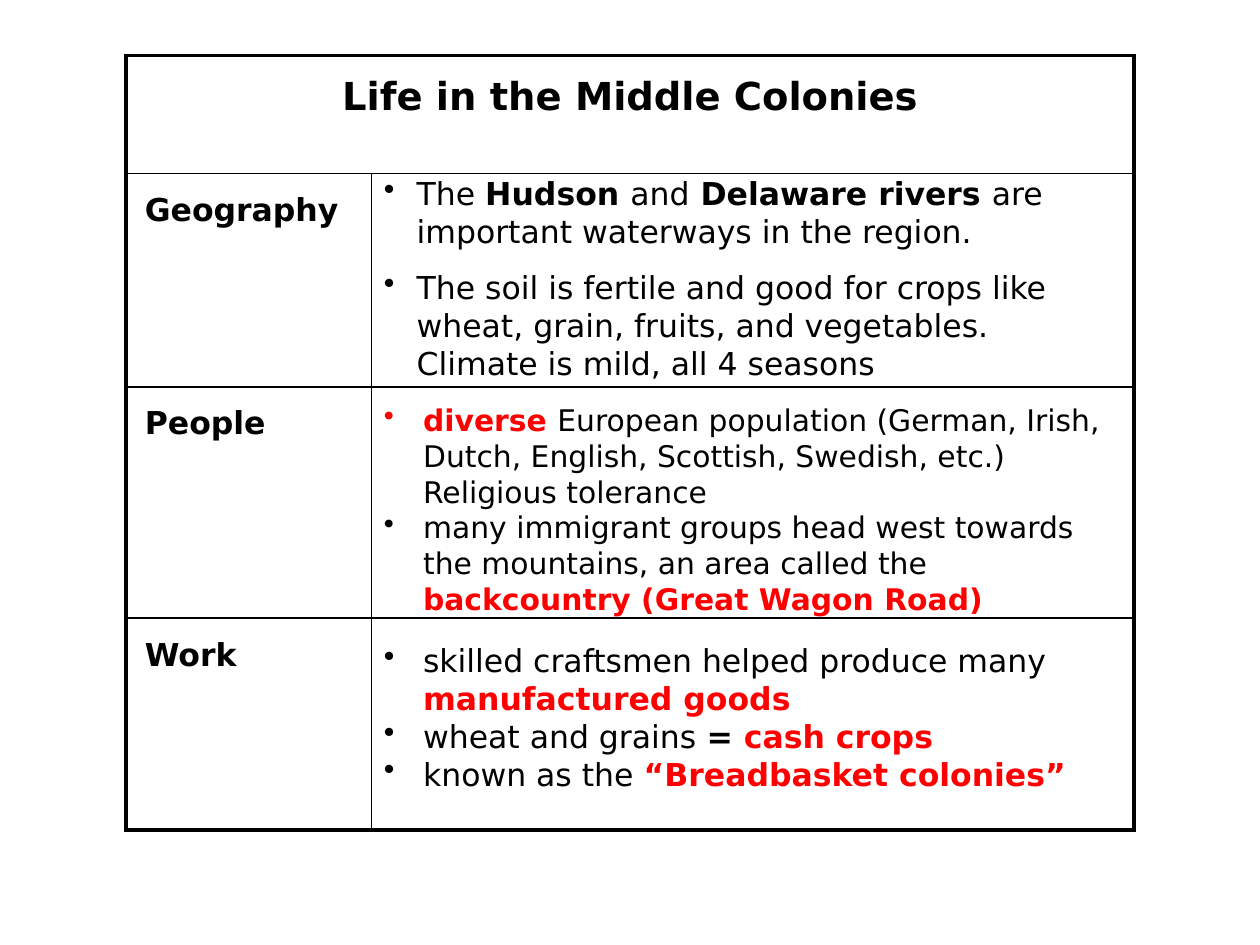
"""Build a slide with a table about life in the Middle Colonies."""
from dataclasses import dataclass
from typing import NamedTuple

import lxml.etree
import pptx
import pptx.dml.color
import pptx.enum.text
import pptx.oxml.ns
import pptx.slide
import pptx.table
import pptx.text.text
import pptx.util

Cm = pptx.util.Cm
BLACK = pptx.dml.color.RGBColor(0x00, 0x00, 0x00)
RED = pptx.dml.color.RGBColor(0xFF, 0x00, 0x00)
WHITE = pptx.dml.color.RGBColor(0xFF, 0xFF, 0xFF)
FONT_NAME = "DejaVu Sans"
INNER_LINE = pptx.util.Pt(1)
OUTER_LINE = pptx.util.Pt(2.25)
COLUMN_WIDTHS = (Cm(4.95), Cm(15.37))
ROW_HEIGHTS = (Cm(2.38), Cm(4.3), Cm(4.66), Cm(4.27))


class Span(NamedTuple):
    text: str
    bold: bool = False
    color: pptx.dml.color.RGBColor = BLACK


@dataclass
class Topic:
    label: str
    top: float
    width: float
    height: float
    size: float
    indent: float
    bullets: list[list[Span]]
    gap: float = 0


TOPICS = [
    Topic("Geography", 3.38, 15.14, 3.86, 18, 0.66, [
        [Span("The "), Span("Hudson ", True), Span("and"),
         Span(" Delaware rivers ", True),
         Span("are important waterways in the region.")],
        [Span("The soil is fertile and good for crops like wheat, grain, fruits, "
              "and vegetables. Climate is mild, all 4 seasons")],
    ], gap=10.6),
    Topic("People", 7.98, 15.14, 4.27, 17, 0.79, [
        [Span("diverse ", True, RED),
         Span("European population (German, Irish, Dutch, English, Scottish, "
              "Swedish, etc.) Religious tolerance")],
        [Span("many immigrant groups head west towards the mountains, "
              "an area called the "),
         Span("backcountry (Great Wagon Road)", True, RED)],
    ]),
    Topic("Work", 12.8, 15.39, 3.33, 18, 0.79, [
        [Span("skilled craftsmen helped produce many "),
         Span("manufactured goods", True, RED)],
        [Span("wheat and grains "), Span("= ", True), Span("cash crops", True, RED)],
        [Span("known as the "), Span("“Breadbasket colonies”", True, RED)],
    ]),
]


def add_span(paragraph: pptx.text.text._Paragraph, span: Span, size: float) -> None:
    run = paragraph.add_run()
    run.text = span.text
    run.font.name = FONT_NAME
    run.font.size = pptx.util.Pt(size)
    run.font.bold = span.bold
    run.font.color.rgb = span.color


def add_element(parent: lxml.etree._Element, tag: str, **attributes: str) -> lxml.etree._Element:
    return lxml.etree.SubElement(parent, pptx.oxml.ns.qn(tag), **attributes)


def style_cell(cell: pptx.table._Cell, row: int, column: int) -> None:
    properties = cell._tc.get_or_add_tcPr()
    outer_sides = {
        "L": column == 0,
        "R": column == len(COLUMN_WIDTHS) - 1 or row == 0,
        "T": row == 0,
        "B": row == len(ROW_HEIGHTS) - 1,
    }
    for side, is_outer in outer_sides.items():
        width = OUTER_LINE if is_outer else INNER_LINE
        line = add_element(properties, f"a:ln{side}", w=str(int(width)))
        fill = add_element(line, "a:solidFill")
        add_element(fill, "a:srgbClr", val=str(BLACK))
    cell.fill.solid()
    cell.fill.fore_color.rgb = WHITE
    cell.margin_left = cell.margin_right = Cm(0.38)
    cell.margin_top = cell.margin_bottom = Cm(0.38)


def add_grid(slide: pptx.slide.Slide) -> pptx.table.Table:
    table = slide.shapes.add_table(
        len(ROW_HEIGHTS), len(COLUMN_WIDTHS), Cm(2.54), Cm(1.12),
        sum(COLUMN_WIDTHS), sum(ROW_HEIGHTS)).table
    for column, width in zip(table.columns, COLUMN_WIDTHS):
        column.width = width
    for row_index, height in enumerate(ROW_HEIGHTS):
        table.rows[row_index].height = height
        for column_index in range(len(COLUMN_WIDTHS)):
            style_cell(table.cell(row_index, column_index), row_index, column_index)
    table.cell(0, 0).merge(table.cell(0, 1))
    return table


def add_bullets(slide: pptx.slide.Slide, topic: Topic) -> None:
    shape = slide.shapes.add_textbox(
        Cm(7.49), Cm(topic.top), Cm(topic.width), Cm(topic.height))
    frame = shape.text_frame
    frame.word_wrap = True
    for index, spans in enumerate(topic.bullets):
        paragraph = frame.add_paragraph() if index else frame.paragraphs[0]
        if index and topic.gap:
            paragraph.space_before = pptx.util.Pt(topic.gap)
        properties = paragraph._p.get_or_add_pPr()
        properties.set("marL", str(int(Cm(topic.indent))))
        properties.set("indent", str(-int(Cm(topic.indent))))
        bullet_color = add_element(properties, "a:buClr")
        add_element(bullet_color, "a:srgbClr", val=str(spans[0].color))
        add_element(properties, "a:buChar", char="•")
        for span in spans:
            add_span(paragraph, span, topic.size)


def main() -> None:
    presentation = pptx.Presentation()
    presentation.slide_width = Cm(25.4)
    presentation.slide_height = Cm(19.05)
    slide = presentation.slides.add_slide(presentation.slide_layouts[6])
    table = add_grid(slide)
    title = table.cell(0, 0).text_frame.paragraphs[0]
    title.alignment = pptx.enum.text.PP_ALIGN.CENTER
    add_span(title, Span("Life in the Middle Colonies", True), 22)
    for row, topic in enumerate(TOPICS, start=1):
        label = table.cell(row, 0).text_frame.paragraphs[0]
        add_span(label, Span(topic.label, True), 18)
        add_bullets(slide, topic)
    presentation.save("out.pptx")


if __name__ == "__main__":
    main()
